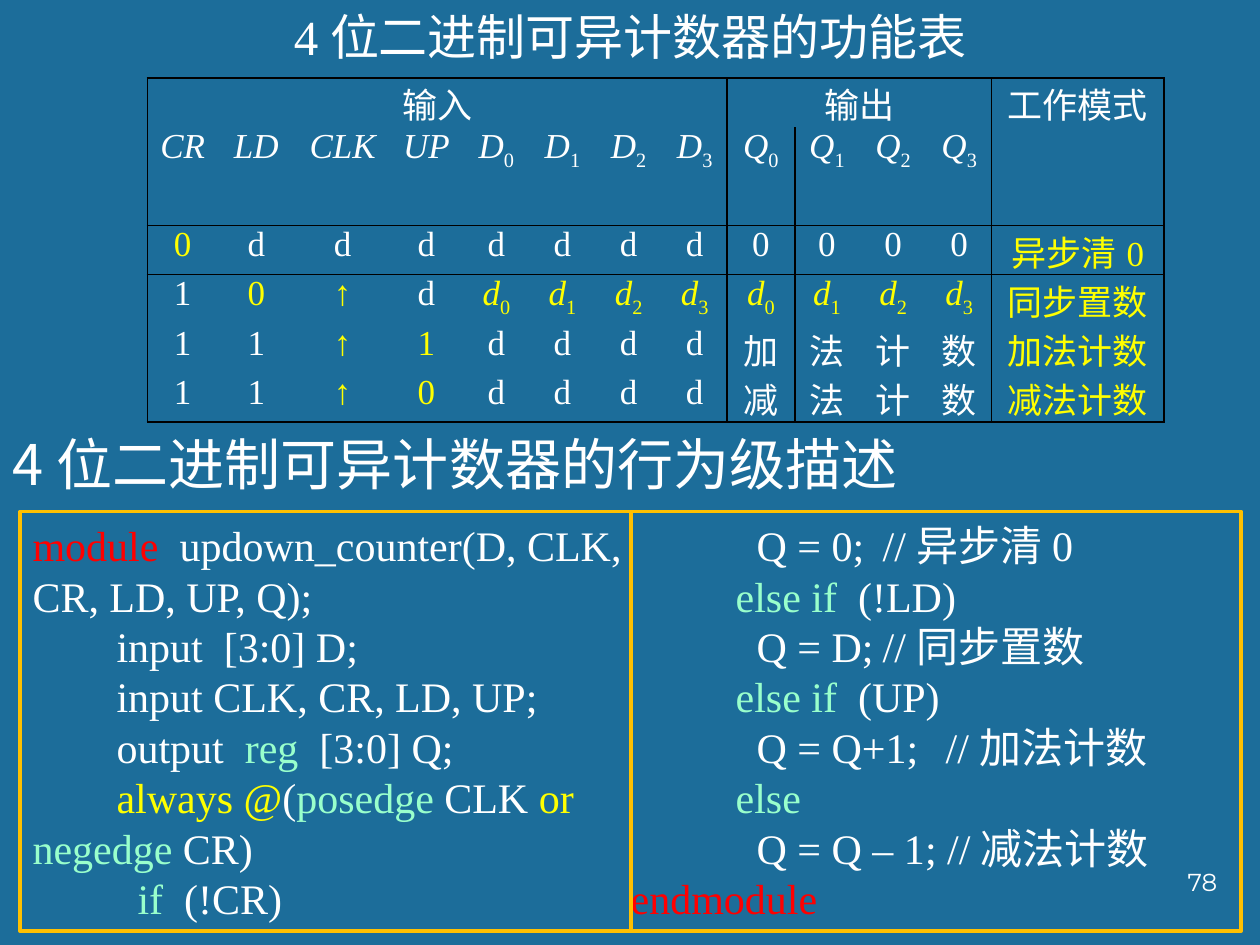
from lxml import etree
from pptx import Presentation
from pptx.dml.color import RGBColor
from pptx.enum.shapes import MSO_CONNECTOR, MSO_SHAPE
from pptx.enum.text import MSO_ANCHOR, MSO_AUTO_SIZE, PP_ALIGN
from pptx.oxml.ns import qn
from pptx.util import Inches, Pt

LEFT, CENTER, RIGHT = PP_ALIGN.LEFT, PP_ALIGN.CENTER, PP_ALIGN.RIGHT
TOP, MIDDLE = MSO_ANCHOR.TOP, MSO_ANCHOR.MIDDLE
NO_FIT, GROW = MSO_AUTO_SIZE.NONE, MSO_AUTO_SIZE.SHAPE_TO_FIT_TEXT
RECTANGLE, STRAIGHT = MSO_SHAPE.RECTANGLE, MSO_CONNECTOR.STRAIGHT

BLUE = RGBColor(0x1C, 0x6D, 0x9A)
WHITE = RGBColor(0xFF, 0xFF, 0xFF)
YELLOW = RGBColor(0xFF, 0xFF, 0x00)
MINT = RGBColor(0x99, 0xFF, 0xCC)
RED = RGBColor(0xFF, 0x00, 0x00)
GOLD = RGBColor(0xFF, 0xC0, 0x00)
BLACK = RGBColor(0x00, 0x00, 0x00)

SERIF, SANS, NUMBER_FONT = "Times New Roman", "Noto Sans CJK SC", "Montserrat"
NO_STYLE = "{2D5ABB26-0587-4C30-8999-92F81FD0307C}"

COLUMN_WIDTHS = [0.56, 0.61, 0.76, 0.57] + [0.54, 0.51] * 4 + [1.37]
ROW_HEIGHTS = [0.39, 0.78] + [0.39] * 4
GROUPS = [(0, 7, 0, "输入"), (8, 11, 0, "输出"), (12, 12, 1, "工作模式")]
SIGNALS = "CR LD CLK UP D0 D1 D2 D3 Q0 Q1 Q2 Q3".split()
MODES = [
    "*0 d d d d d d d 0 0 0 0 *异步清0".split(),
    "1 *0 *↑ d *d0 *d1 *d2 *d3 *d0 *d1 *d2 *d3 *同步置数".split(),
    "1 1 *↑ *1 d d d d 加 法 计 数 *加法计数".split(),
    "1 1 *↑ *0 d d d d 减 法 计 数 *减法计数".split(),
]

CODE = [
    (0, None, [("module  ", RED), ("updown_counter(D, CLK, CR, LD, UP, Q);", WHITE)]),
    (8, None, [("input  [3:0] D;", WHITE)]),
    (8, None, [("input CLK, CR, LD, UP;", WHITE)]),
    (8, None, [("output  ", WHITE), ("reg", MINT), ("  [3:0] Q;", WHITE)]),
    (8, None, [("always @", YELLOW), ("(", WHITE), ("posedge", MINT), (" CLK ", WHITE),
               ("or ", YELLOW), ("negedge", MINT), (" CR)", WHITE)]),
    (10, None, [("if ", MINT), (" (!CR)", WHITE)]),
    (12, 2.67, [("Q = 0;\t//异步清0", WHITE)]),
    (10, None, [("else if  ", MINT), ("(!LD)", WHITE)]),
    (12, 2.42, [("Q = D;\t//同步置数", WHITE)]),
    (10, None, [("else if  ", MINT), ("(UP)", WHITE)]),
    (12, 2.52, [("Q = Q+1;\t//加法计数", WHITE)]),
    (10, None, [("else", MINT)]),
    (12, None, [("Q = Q – 1; //减法计数", WHITE)]),
    (0, None, [("endmodule", RED)]),
]


def apply_format(target, values):
    """Set every attribute named in a dict of format values."""
    for name, value in values.items():
        setattr(target, name, value)


def add_span(para, text, color, size, name=SERIF, italic=False):
    """Append a formatted run and return it."""
    span = para.add_run()
    span.text = text
    apply_format(span.font, {"size": Pt(size), "name": name, "italic": italic})
    span.font.color.rgb = color
    east_asian = etree.SubElement(span.font._element, qn("a:ea"))
    east_asian.set("typeface", SANS)
    return span


def write_line(shape, text, size, name, align, anchor, fit):
    """Write one white line into a shape."""
    frame = shape.text_frame
    apply_format(frame, {"word_wrap": True, "auto_size": fit, "vertical_anchor": anchor})
    para = frame.paragraphs[0]
    para.alignment = align
    add_span(para, text, WHITE, size, name)


def add_title(page, left, top, width, height):
    """Move the title placeholder and fill it."""
    title = page.shapes.title
    apply_format(title, {"left": Inches(left), "top": Inches(top),
                         "width": Inches(width), "height": Inches(height)})
    write_line(title, "4位二进制可异计数器的功能表", 28, SERIF, CENTER, TOP, NO_FIT)


def add_label(page, box, text, size, name, align, fit):
    """Add a text box with one line."""
    label = page.shapes.add_textbox(*map(Inches, box))
    write_line(label, text, size, name, align, TOP, fit)


def add_border(cell, side):
    """Draw one thin black edge of a cell."""
    line = etree.SubElement(cell._tc.get_or_add_tcPr(), qn("a:ln" + side), w=str(Pt(1)))
    fill = etree.SubElement(line, qn("a:solidFill"))
    etree.SubElement(fill, qn("a:srgbClr"), val=str(BLACK))


def fill_cell(cell, token, italic=False):
    """Write a token: a star means yellow, a letter with a digit has a subscript."""
    color = YELLOW if token.startswith("*") else WHITE
    text = token.lstrip("*")
    para = cell.text_frame.paragraphs[0]
    para.alignment = CENTER
    if len(text) == 2 and text[1].isdigit():
        add_span(para, text[0], color, 20, italic=True)
        add_span(para, text[1], color, 20).font._element.set("baseline", "-25000")
    else:
        add_span(para, text, color, 20, italic=italic)


def style_cell(cell, row, column):
    """Set margins, group borders and an empty fill."""
    last_row = row + max(cell.span_height, 1) - 1
    last_column = column + max(cell.span_width, 1) - 1
    starts, ends = zip(*[group[:2] for group in GROUPS])
    edges = {"L": column in starts, "R": last_column in ends,
             "T": row in (0, 2), "B": last_row in (1, len(ROW_HEIGHTS) - 1)}
    for side, drawn in edges.items():
        if drawn:
            add_border(cell, side)
    apply_format(cell, {"margin_left": Inches(0.07), "margin_right": Inches(0.07),
                        "margin_top": 0, "margin_bottom": 0, "vertical_anchor": TOP})
    cell.fill.background()


def add_function_table(page, left, top, width, height):
    """Add the table of counter inputs, outputs and modes."""
    frame = page.shapes.add_table(len(ROW_HEIGHTS), len(COLUMN_WIDTHS),
                                  *map(Inches, (left, top, width, height)))
    table = frame.table
    apply_format(table, {"first_row": False, "horz_banding": False})
    table._tbl.tblPr.find(qn("a:tableStyleId")).text = NO_STYLE
    for column, size in zip(table.columns, COLUMN_WIDTHS):
        column.width = Inches(size)
    for row, size in zip(table.rows, ROW_HEIGHTS):
        row.height = Inches(size)
    for first, last, bottom, heading in GROUPS:
        table.cell(0, first).merge(table.cell(bottom, last))
        fill_cell(table.cell(0, first), heading)
    for column, signal in enumerate(SIGNALS):
        fill_cell(table.cell(1, column), signal, italic=True)
    for row, tokens in enumerate(MODES, 2):
        for column, token in enumerate(tokens):
            fill_cell(table.cell(row, column), token)
    for row in range(len(ROW_HEIGHTS)):
        for column in range(len(COLUMN_WIDTHS)):
            style_cell(table.cell(row, column), row, column)


def add_code(page, left, top, width, height):
    """Add the framed two-column module listing and its divider."""
    box = page.shapes.add_shape(RECTANGLE, *map(Inches, (left, top, width, height)))
    box.shadow.inherit = False
    box.fill.background()
    frame = box.text_frame
    apply_format(frame, {"word_wrap": True, "auto_size": GROW, "vertical_anchor": MIDDLE})
    frame._txBody.bodyPr.set("numCol", "2")
    for index, (indent, tab, spans) in enumerate(CODE):
        para = frame.add_paragraph() if index else frame.paragraphs[0]
        para.alignment = LEFT
        properties = para._p.get_or_add_pPr()
        properties.set("marL", "0")
        properties.set("indent", str(Inches(indent / 12)))
        if tab:
            stops = etree.SubElement(properties, qn("a:tabLst"))
            etree.SubElement(stops, qn("a:tab"), pos=str(Inches(tab)), algn="l")
        for text, color in spans:
            add_span(para, text, color, 24)
    middle = Inches(left + width / 2)
    divider = page.shapes.add_connector(STRAIGHT, middle, Inches(top),
                                        middle, Inches(top + height))
    etree.SubElement(divider._element.spPr, qn("a:effectLst"))
    for shape in (box, divider):
        shape.line.color.rgb = GOLD
        shape.line.width = Pt(2.25)


def main():
    """Build the counter slide and save it."""
    deck = Presentation()
    apply_format(deck, {"slide_width": Inches(10), "slide_height": Inches(7.5)})
    page = deck.slides.add_slide(deck.slide_layouts[5])
    page.background.fill.solid()
    page.background.fill.fore_color.rgb = BLUE
    add_label(page, (0, 3.36, 7.93, 0.64), "4位二进制可异计数器的行为级描述", 32, SANS, LEFT, GROW)
    add_title(page, 0, 0, 10, 0.57)
    add_code(page, 0.16, 4.06, 9.69, 3.33)
    add_function_table(page, 1.17, 0.62, 8.05, 2.73)
    add_label(page, (7.68, 6.83, 2.08, 0.5), "78", 14, NUMBER_FONT, RIGHT, NO_FIT)
    deck.save("out.pptx")


if __name__ == "__main__":
    main()
